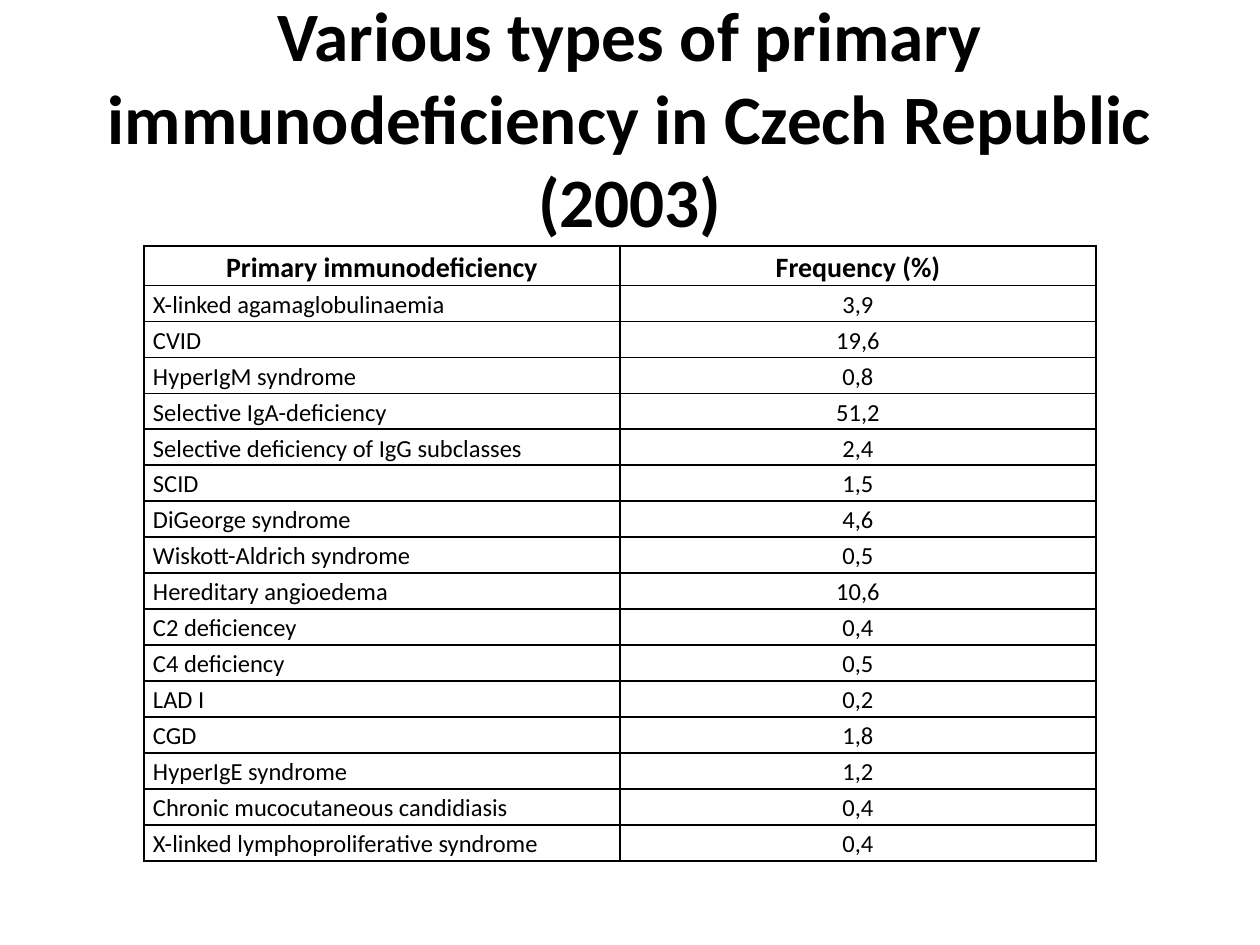
from dataclasses import dataclass

from lxml.etree import SubElement
from pptx import Presentation
from pptx.dml.color import RGBColor
from pptx.enum.text import MSO_ANCHOR, MSO_AUTO_SIZE, PP_ALIGN
from pptx.oxml.ns import qn
from pptx.util import Emu, Pt

PIXELS_PER_INCH = 126
TITLE = "Various types of primary immunodeficiency in Czech Republic (2003)"
HEADINGS = ("Primary immunodeficiency", "Frequency (%)")
FREQUENCIES = (
    ("X-linked agamaglobulinaemia", "3,9"),
    ("CVID", "19,6"),
    ("HyperIgM syndrome", "0,8"),
    ("Selective IgA-deficiency", "51,2"),
    ("Selective deficiency of IgG subclasses", "2,4"),
    ("SCID", "1,5"),
    ("DiGeorge syndrome", "4,6"),
    ("Wiskott-Aldrich syndrome", "0,5"),
    ("Hereditary angioedema", "10,6"),
    ("C2 deficiencey", "0,4"),
    ("C4 deficiency", "0,5"),
    ("LAD I", "0,2"),
    ("CGD", "1,8"),
    ("HyperIgE syndrome", "1,2"),
    ("Chronic mucocutaneous candidiasis", "0,4"),
    ("X-linked lymphoproliferative syndrome", "0,4"),
)


@dataclass(frozen=True)
class Theme:
    font: str = "Calibri"
    ink: str = "000000"
    title_size: float = 39.6
    heading_size: int = 16
    body_size: int = 14
    border_width: int = 1


def px(length):
    return Emu(round(length * 914400 / PIXELS_PER_INCH))


def write_text(frame, text, *, theme, size, bold=False, align=PP_ALIGN.LEFT,
               line_spacing=None, space_after=None):
    para = frame.paragraphs[0]
    para.alignment = align
    para.line_spacing = line_spacing
    para.space_after = space_after
    span = para.add_run()
    span.text = text
    span.font.name = theme.font
    span.font.size = Pt(size)
    span.font.bold = bold
    span.font.color.rgb = RGBColor.from_string(theme.ink)


class SlideBuilder:
    def __init__(self, page, theme):
        self.page = page
        self.theme = theme

    def title(self, text, left, top, width, height):
        box = self.page.shapes.add_textbox(px(left), px(top), px(width), px(height))
        frame = box.text_frame
        frame.word_wrap = True
        frame.auto_size = MSO_AUTO_SIZE.NONE
        frame.vertical_anchor = MSO_ANCHOR.MIDDLE
        write_text(frame, text, theme=self.theme, size=self.theme.title_size,
                   bold=True, align=PP_ALIGN.CENTER)

    def table(self, rows, left, top, column_width, heading_height, row_height):
        column_count = len(rows[0])
        heights = [heading_height] + [row_height] * (len(rows) - 1)
        table = self.page.shapes.add_table(
            len(rows), column_count, px(left), px(top),
            px(column_width * column_count), px(sum(heights))).table
        table.first_row = False
        table.horz_banding = False
        for column in table.columns:
            column.width = px(column_width)
        for row_index, (values, height) in enumerate(zip(rows, heights)):
            table.rows[row_index].height = px(height)
            for column_index, text in enumerate(values):
                self.cell(table.cell(row_index, column_index), text,
                          heading=row_index == 0,
                          centred=row_index == 0 or column_index > 0)

    def cell(self, cell, text, heading, centred):
        cell.margin_left = cell.margin_right = px(9)
        cell.margin_top = cell.margin_bottom = 0
        self.borders(cell)
        cell.fill.background()
        write_text(cell.text_frame, text, theme=self.theme, bold=heading,
                   size=self.theme.heading_size if heading else self.theme.body_size,
                   align=PP_ALIGN.CENTER if centred else PP_ALIGN.LEFT,
                   line_spacing=1.15, space_after=Pt(10))

    def borders(self, cell):
        properties = cell._tc.get_or_add_tcPr()
        for side in ("lnL", "lnR", "lnT", "lnB"):
            line = SubElement(properties, qn(f"a:{side}"),
                              w=str(Pt(self.theme.border_width)))
            fill = SubElement(line, qn("a:solidFill"))
            SubElement(fill, qn("a:srgbClr"), val=self.theme.ink)


def main():
    deck = Presentation()
    deck.slide_width = px(1260)
    deck.slide_height = px(945)
    page = deck.slides.add_slide(deck.slide_layouts[6])
    builder = SlideBuilder(page, Theme())
    builder.title(TITLE, left=63, top=38, width=1134, height=158)
    builder.table((HEADINGS, *FREQUENCIES), left=144, top=246, column_width=476,
                  heading_height=39, row_height=36)
    deck.save("out.pptx")


if __name__ == "__main__":
    main()
